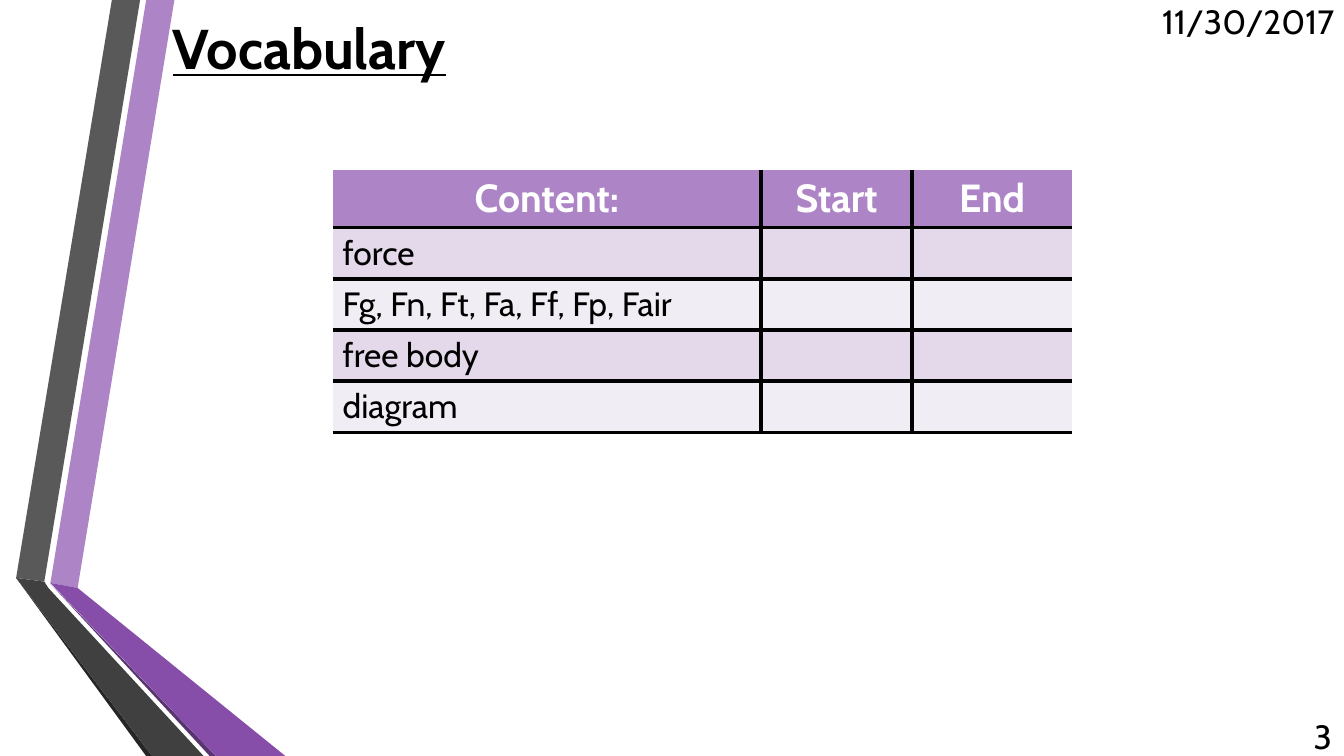
from dataclasses import dataclass

from lxml import etree
from pptx import Presentation
from pptx.dml.color import RGBColor
from pptx.enum.text import MSO_ANCHOR, PP_ALIGN
from pptx.oxml.ns import qn
from pptx.util import Inches, Pt

LEFT, CENTER, RIGHT = PP_ALIGN.LEFT, PP_ALIGN.CENTER, PP_ALIGN.RIGHT
TOP, MIDDLE = MSO_ANCHOR.TOP, MSO_ANCHOR.MIDDLE
GRID_COLS, GRID_ROWS = 160, 90
WIDTH, HEIGHT = Inches(13.33), Inches(7.5)


@dataclass(frozen=True)
class Theme:
    font: str = "Cabin"
    ink: str = "000000"
    white: str = "FFFFFF"
    lilac: str = "AD84C6"
    violet: str = "874EA9"
    plum: str = "5A3471"
    gray: str = "595959"
    charcoal: str = "404040"
    soot: str = "262626"
    bands: tuple = ("E3D9EA", "F1EDF5")
    title: int = 40
    header: int = 28
    body: int = 24
    rule: int = 3


THEME = Theme()

RIBBONS = [
    (THEME.lilac, [(6, 69.4), (9.24, 70), (20.76, 0), (17.4, 0)]),
    (THEME.gray, [(16.68, 0), (13.32, 0), (1.92, 68.8), (5.28, 69.24)]),
    (THEME.soot, [(1.92, 68.8), (17.4, 90), (18.12, 90)]),
    (THEME.plum, [(6, 69.48), (24.96, 90), (25.68, 90)]),
    (THEME.violet, [(6, 69.4), (25.68, 90), (33.96, 90), (9.24, 70)]),
    (THEME.charcoal, [(24.24, 90), (5.76, 70), (5.28, 69.24), (1.92, 68.8), (18.12, 90)]),
]

HEADERS = ["Content:", "Start", "End"]
TERMS = ["force", "Fg, Fn, Ft, Fa, Ff, Fp, Fair", "free body", "diagram"]
COLUMN_WIDTHS = [51, 18, 19]
HEADER_HEIGHT, TERM_HEIGHT = 6.9, 6.1


def col(n):
    return round(WIDTH * n / GRID_COLS)


def row(n):
    return round(HEIGHT * n / GRID_ROWS)


def add_run(p, text, size, color=THEME.ink, bold=False, underline=False):
    r = p.add_run()
    r.text = text
    r.font.name = THEME.font
    r.font.size = Pt(size)
    r.font.bold = bold
    r.font.underline = underline
    r.font.color.rgb = RGBColor.from_string(color)


def add_ribbon(slide, color, points):
    corners = [(col(x), row(y)) for x, y in points]
    builder = slide.shapes.build_freeform(*corners[0], scale=1.0)
    builder.add_line_segments(corners[1:], close=True)
    sp = builder.convert_to_shape()
    sp.shadow.inherit = False
    sp.fill.solid()
    sp.fill.fore_color.rgb = RGBColor.from_string(color)
    sp.line.fill.background()


def add_label(slide, x, y, w, h, text, size, align=LEFT, **style):
    tf = slide.shapes.add_textbox(col(x), row(y), col(w), row(h)).text_frame
    tf.word_wrap = True
    tf.vertical_anchor = MIDDLE
    p = tf.paragraphs[0]
    p.alignment = align
    add_run(p, text, size, **style)


def set_borders(cell, ruled):
    tcPr = cell._tc.get_or_add_tcPr()
    for position, edge in enumerate(["lnL", "lnR", "lnT", "lnB"]):
        ln = etree.Element(qn(f"a:{edge}"), w=str(Pt(THEME.rule)))
        if edge in ruled:
            fill = etree.SubElement(ln, qn("a:solidFill"))
            etree.SubElement(fill, qn("a:srgbClr"), val=THEME.ink)
        else:
            etree.SubElement(ln, qn("a:noFill"))
        tcPr.insert(position, ln)


def fill_cell(cell, color, ruled, anchor):
    cell.fill.solid()
    cell.fill.fore_color.rgb = RGBColor.from_string(color)
    cell.vertical_anchor = anchor
    set_borders(cell, ruled)


def add_vocabulary_table(slide, x, y):
    heights = [HEADER_HEIGHT] + [TERM_HEIGHT] * len(TERMS)
    table = slide.shapes.add_table(
        len(heights), len(HEADERS), col(x), row(y),
        col(sum(COLUMN_WIDTHS)), row(sum(heights))).table
    table.first_row = False
    table.horz_banding = False
    for column, width in zip(table.columns, COLUMN_WIDTHS):
        column.width = col(width)
    for table_row, height in zip(table.rows, heights):
        table_row.height = row(height)

    for i in range(len(heights)):
        for j, header in enumerate(HEADERS):
            cell = table.cell(i, j)
            ruled = {"lnB"}
            if i > 0:
                ruled.add("lnT")
            if j > 0:
                ruled.add("lnL")
            if j < len(HEADERS) - 1:
                ruled.add("lnR")
            p = cell.text_frame.paragraphs[0]
            if i == 0:
                fill_cell(cell, THEME.lilac, ruled, MIDDLE)
                p.alignment = CENTER
                add_run(p, header, THEME.header, THEME.white, bold=True)
            else:
                fill_cell(cell, THEME.bands[(i - 1) % 2], ruled, TOP)
                if j == 0:
                    add_run(p, TERMS[i - 1], THEME.body)


def main():
    prs = Presentation()
    prs.slide_width, prs.slide_height = WIDTH, HEIGHT
    slide = prs.slides.add_slide(prs.slide_layouts[6])
    for color, points in RIBBONS:
        add_ribbon(slide, color, points)
    add_label(slide, 19.4, 0.1, 131.5, 11, "Vocabulary", THEME.title,
              bold=True, underline=True)
    add_label(slide, 135.5, 0.1, 24.5, 4.8, "11/30/2017", THEME.body, RIGHT)
    add_label(slide, 151, 85.2, 8.75, 4.8, "3", THEME.body, RIGHT)
    add_vocabulary_table(slide, 39.6, 20.2)
    prs.save("out.pptx")


if __name__ == "__main__":
    main()
